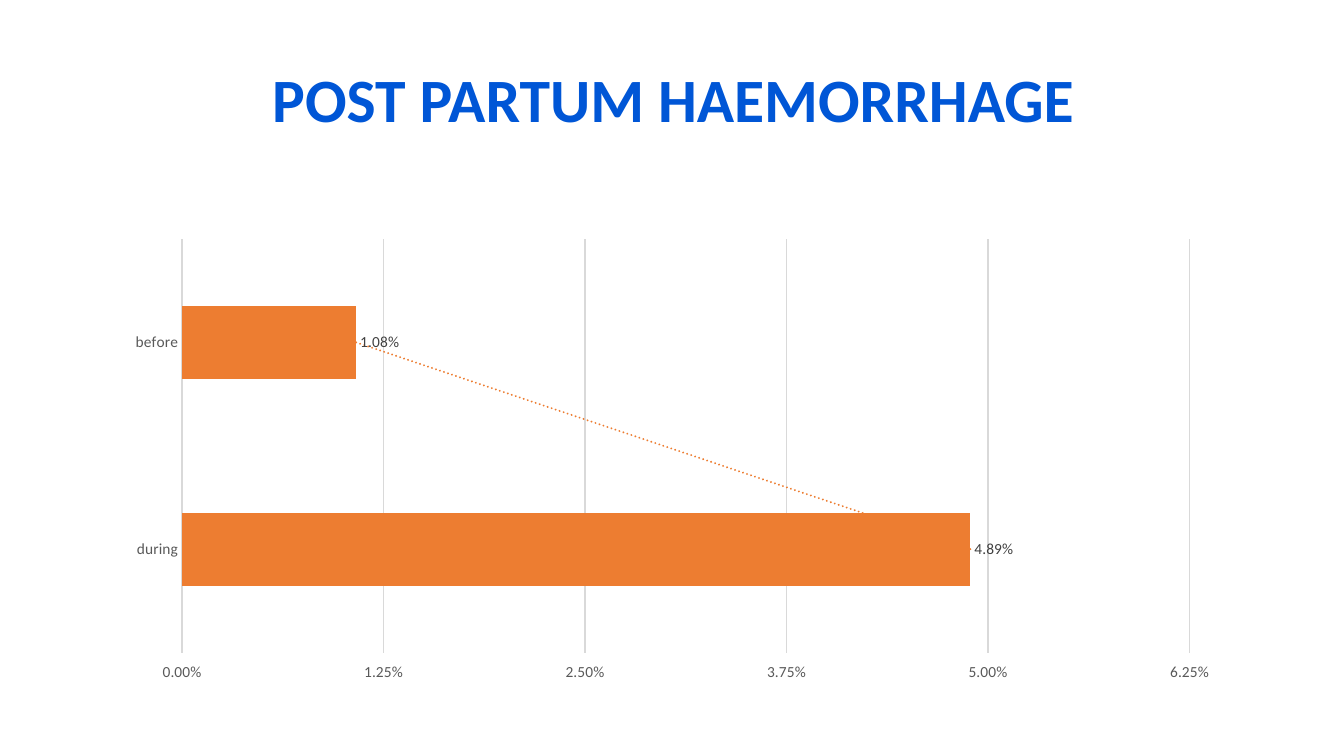
"""Build the post partum haemorrhage slide with a bar chart and its trend line."""

from pptx import Presentation
from pptx.chart.data import CategoryChartData
from pptx.dml.color import RGBColor
from pptx.enum.chart import XL_CHART_TYPE, XL_LABEL_POSITION, XL_TICK_LABEL_POSITION, XL_TICK_MARK
from pptx.enum.text import MSO_ANCHOR, PP_ALIGN
from pptx.oxml import parse_xml
from pptx.oxml.ns import nsdecls, qn
from pptx.util import Emu, Pt

EMU_PER_PX = 9144
FONT = "Calibri"
PERCENT = "0.00%"
COLORS = {
    "title": "0056D6",
    "bar": "ED7D31",
    "grid": "D9D9D9",
    "axis": "595959",
    "label": "404040",
}


def px(length):
    return Emu(length * EMU_PER_PX)


def color(name):
    return RGBColor.from_string(COLORS[name])


def style_font(font, size, color_name, bold=False):
    font.name = FONT
    font.size = Pt(size)
    font.bold = bold
    font.color.rgb = color(color_name)


def style_line(line, color_name):
    line.color.rgb = color(color_name)
    line.width = Pt(1)


def add_title(slide, text, left, top, width, height):
    text_frame = slide.shapes.add_textbox(px(left), px(top), px(width), px(height)).text_frame
    text_frame.word_wrap = True
    text_frame.vertical_anchor = MSO_ANCHOR.MIDDLE
    text_frame.margin_left = text_frame.margin_right = text_frame.margin_top = px(5)
    text_frame.margin_bottom = px(78)
    text_frame.text = text
    paragraph = text_frame.paragraphs[0]
    paragraph.alignment = PP_ALIGN.CENTER
    paragraph.line_spacing = 0.9
    style_font(paragraph.runs[0].font, 44, "title", bold=True)


def style_axes(chart):
    for axis in (chart.category_axis, chart.value_axis):
        axis.major_tick_mark = axis.minor_tick_mark = XL_TICK_MARK.NONE
        style_font(axis.tick_labels.font, 11, "axis")
    categories, values = chart.category_axis, chart.value_axis
    categories.reverse_order = True
    style_line(categories.format.line, "grid")
    values.minimum_scale = 0
    values.maximum_scale = 0.0625
    values.major_unit = 0.0125
    values.tick_label_position = XL_TICK_LABEL_POSITION.HIGH
    values.tick_labels.number_format = PERCENT
    values.tick_labels.number_format_is_linked = False
    values.format.line.fill.background()
    style_line(values.major_gridlines.format.line, "grid")


def style_series(series):
    series.format.fill.solid()
    series.format.fill.fore_color.rgb = color("bar")
    labels = series.data_labels
    labels.show_value = True
    labels.position = XL_LABEL_POSITION.OUTSIDE_END
    labels.number_format = PERCENT
    labels.number_format_is_linked = False
    style_font(labels.font, 11, "label")


def add_trend_line(series):
    trend_line = parse_xml(
        f'<c:trendline {nsdecls("c", "a")}><c:spPr><a:ln w="{Pt(1.5)}" cap="rnd">'
        f'<a:solidFill><a:srgbClr val="{COLORS["bar"]}"/></a:solidFill>'
        '<a:prstDash val="sysDot"/></a:ln></c:spPr><c:trendlineType val="linear"/>'
        '<c:dispRSqr val="0"/><c:dispEq val="0"/></c:trendline>'
    )
    series._element.find(qn("c:cat")).addprevious(trend_line)


def place_plot(chart, **fractions):
    plot_area = chart._chartSpace.chart.plotArea
    for layout in plot_area.findall(qn("c:layout")):
        plot_area.remove(layout)
    sizes = "".join(f'<c:{name} val="{value}"/>' for name, value in fractions.items())
    plot_area.insert(0, parse_xml(
        f'<c:layout {nsdecls("c")}><c:manualLayout><c:layoutTarget val="inner"/>'
        f'<c:xMode val="edge"/><c:yMode val="edge"/>{sizes}</c:manualLayout></c:layout>'
    ))


def add_bar_chart(slide, categories, values, left, top, width, height):
    chart_data = CategoryChartData(number_format=PERCENT)
    chart_data.categories = categories
    chart_data.add_series("Series 1", values)
    chart = slide.shapes.add_chart(
        XL_CHART_TYPE.BAR_CLUSTERED, px(left), px(top), px(width), px(height), chart_data
    ).chart
    chart.has_title = False
    chart.has_legend = False
    chart.font.name = FONT
    chart.font.size = Pt(10)
    plot = chart.plots[0]
    plot.gap_width = 182
    plot.vary_by_categories = False
    style_axes(chart)
    style_series(plot.series[0])
    add_trend_line(plot.series[0])
    place_plot(chart, x=0.055, y=0.04, w=0.921, h=0.898)


def main():
    presentation = Presentation()
    presentation.slide_width = px(1333)
    presentation.slide_height = px(750)
    slide = presentation.slides.add_slide(presentation.slide_layouts[6])
    add_title(slide, "POST PARTUM HAEMORRHAGE", 117, 61, 1102, 154)
    add_bar_chart(slide, ["before", "during"], [0.0108, 0.0489], 121, 219, 1085, 457)
    presentation.save("out.pptx")


if __name__ == "__main__":
    main()
